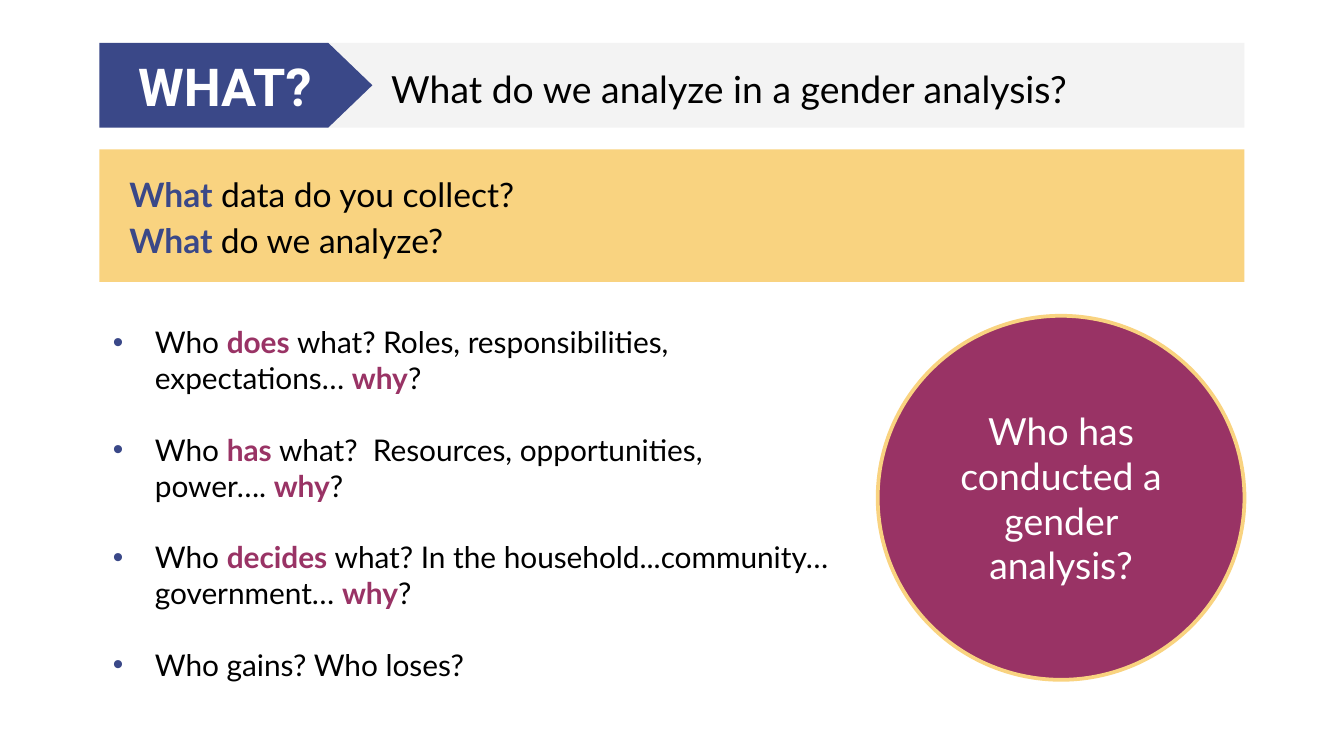
from lxml.etree import SubElement
from pptx import Presentation
from pptx.dml.color import RGBColor
from pptx.enum.shapes import MSO_SHAPE
from pptx.enum.text import MSO_ANCHOR, MSO_AUTO_SIZE, PP_ALIGN
from pptx.oxml.ns import qn
from pptx.util import Pt

BLACK = RGBColor(0x00, 0x00, 0x00)
WHITE = RGBColor(0xFF, 0xFF, 0xFF)
GRAY = RGBColor(0xF3, 0xF3, 0xF3)
BLUE = RGBColor(0x3A, 0x48, 0x88)
PLUM = RGBColor(0x99, 0x33, 0x65)
YELLOW = RGBColor(0xF9, 0xD3, 0x80)

NBSP = chr(160)
LEFT, RIGHT = 53.3, 666.7
HEADER_TOP, HEADER_HEIGHT = 23, 45.4

# Each question is a list of (text, is_highlighted) pieces.
QUESTIONS = [
    [("Who ", False), ("does ", True),
     (f"what? Roles, responsibilities, expectations…{NBSP}", False),
     ("why", True), ("?", False)],
    [("Who ", False), ("has ", True),
     (f"what?{NBSP} Resources, opportunities, power….{NBSP}", False),
     ("why", True), ("?", False)],
    [("Who ", False), ("decides ", True),
     (f"what? In the household...community… government…{NBSP}", False),
     ("why", True), ("?", False)],
    [("Who gains? Who loses?", False)],
]
BAND_LINES = [
    [("What", True), (" data do you collect?", False)],
    [("What ", True), ("do we analyze?", False)],
]


def place(shape, left, top, width, height):
    shape.left, shape.top = Pt(left), Pt(top)
    shape.width, shape.height = Pt(width), Pt(height)


def fill_solid(shape, color):
    shape.fill.solid()
    shape.fill.fore_color.rgb = color


def set_frame(shape, anchor, left=7.2, top=7.2, right=7.2, bottom=7.2):
    frame = shape.text_frame
    frame.word_wrap = True
    frame.auto_size = MSO_AUTO_SIZE.NONE
    frame.vertical_anchor = anchor
    frame.margin_left, frame.margin_top = Pt(left), Pt(top)
    frame.margin_right, frame.margin_bottom = Pt(right), Pt(bottom)
    return frame


def add_run(paragraph, text, size, color, bold=False, font="Lato"):
    run = paragraph.add_run()
    run.text = text
    run.font.name = font
    run.font.size = Pt(size)
    run.font.bold = bold
    run.font.color.rgb = color


def set_bullet(paragraph, indent=0):
    """Give a blue bullet with a hanging indent, or none if indent is 0."""
    properties = paragraph._p.get_or_add_pPr()
    properties.set("marL", str(Pt(indent)))
    properties.set("indent", str(-Pt(indent)))
    if indent:
        color = SubElement(properties, qn("a:buClr"))
        SubElement(color, qn("a:srgbClr")).set("val", str(BLUE))
        SubElement(properties, qn("a:buChar")).set("char", "•")
    else:
        SubElement(properties, qn("a:buNone"))


def write_lines(frame, lines, size, highlight, indent=0, gap=0, line_spacing=1.0):
    for index, pieces in enumerate(lines):
        paragraph = frame.add_paragraph() if index else frame.paragraphs[0]
        set_bullet(paragraph, indent)
        paragraph.alignment = PP_ALIGN.LEFT
        paragraph.line_spacing = line_spacing
        paragraph.space_before = Pt(gap if index else 0)
        for text, highlighted in pieces:
            color = highlight if highlighted else BLACK
            add_run(paragraph, text, size, color, highlighted)


def format_title(title):
    left = 175
    place(title, left, HEADER_TOP, RIGHT - left, HEADER_HEIGHT)
    fill_solid(title, GRAY)
    frame = set_frame(title, MSO_ANCHOR.MIDDLE, left=34.5)
    paragraph = frame.paragraphs[0]
    paragraph.alignment = PP_ALIGN.LEFT
    paragraph.line_spacing = 1.15
    add_run(paragraph, "What do we analyze in a gender analysis?", 20, BLACK)


def format_band(body):
    place(body, LEFT, 80, RIGHT - LEFT, 71)
    fill_solid(body, YELLOW)
    frame = set_frame(body, MSO_ANCHOR.TOP, left=16, top=10)
    write_lines(frame, BAND_LINES, 18, BLUE, line_spacing=1.15)


def format_questions(body):
    place(body, LEFT, 170, 403, 201)
    frame = set_frame(body, MSO_ANCHOR.TOP, top=3.6, bottom=3.6)
    write_lines(frame, QUESTIONS, 16, PLUM, indent=22.5, gap=19.2)


def add_label_shape(slide, kind, box, color, text, size, font):
    shape = slide.shapes.add_shape(kind, *map(Pt, box))
    shape.shadow.inherit = False
    fill_solid(shape, color)
    shape.line.fill.background()
    frame = set_frame(shape, MSO_ANCHOR.MIDDLE)
    paragraph = frame.paragraphs[0]
    paragraph.alignment = PP_ALIGN.CENTER
    add_run(paragraph, text, size, WHITE, font == "Roboto", font)
    return shape


def main():
    presentation = Presentation()
    presentation.slide_width, presentation.slide_height = Pt(720), Pt(405)
    two_content = presentation.slide_layouts[3]
    slide = presentation.slides.add_slide(two_content)

    title, band, questions = slide.placeholders
    format_title(title)
    format_band(band)
    format_questions(questions)

    tag = add_label_shape(slide, MSO_SHAPE.PENTAGON,
                          (LEFT, HEADER_TOP, 146.2, HEADER_HEIGHT),
                          BLUE, "WHAT?", 28, "Roboto")
    tag.adjustments[0] = 0.52

    circle = add_label_shape(slide, MSO_SHAPE.OVAL, (470.2, 169.2, 196.5, 195),
                             PLUM, "Who has conducted a gender analysis?",
                             20, "Lato")
    circle.line.color.rgb = YELLOW
    circle.line.width = Pt(2)

    presentation.save("out.pptx")


if __name__ == "__main__":
    main()
